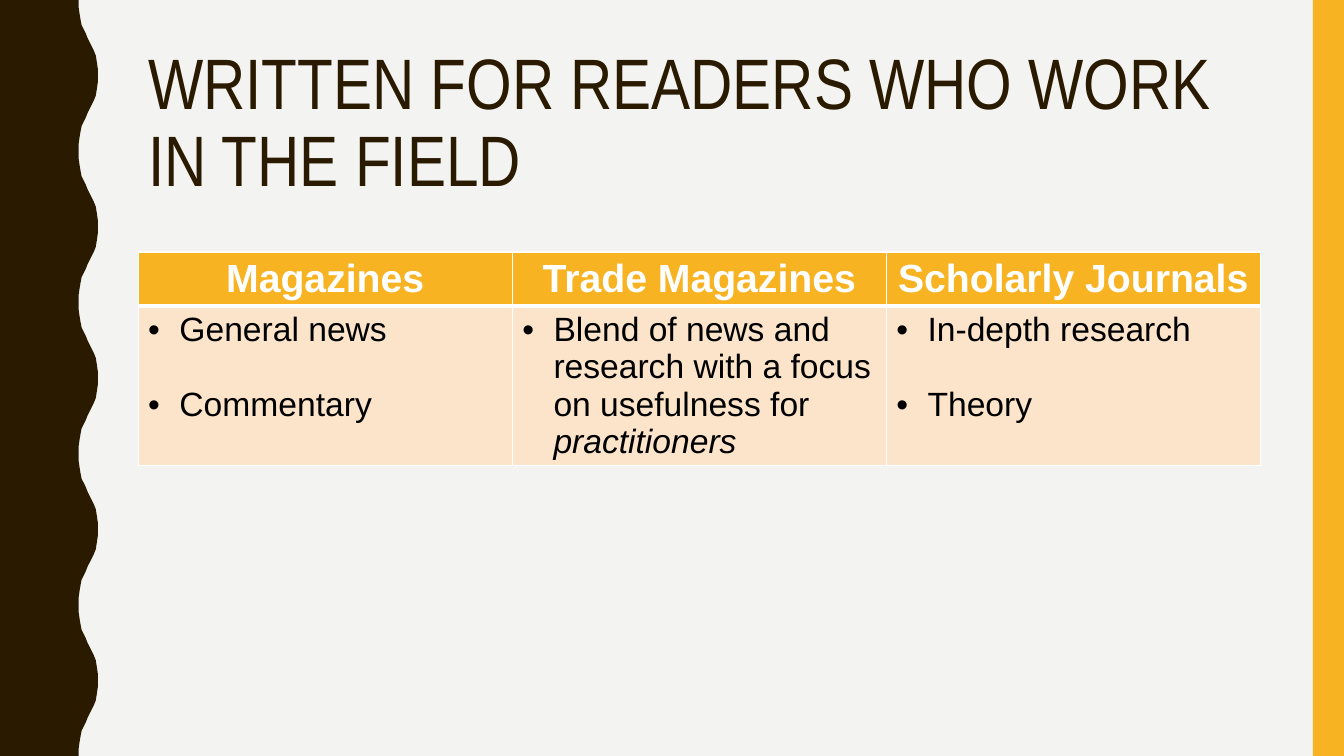
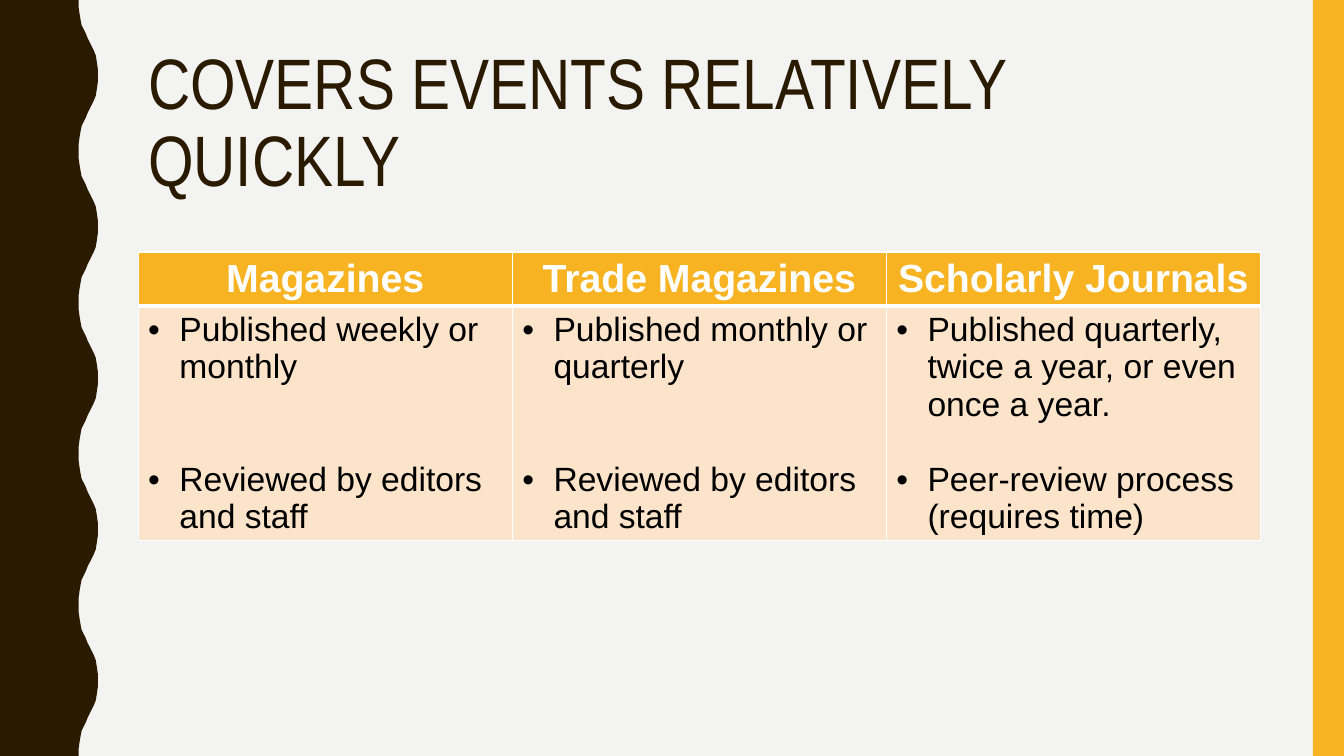
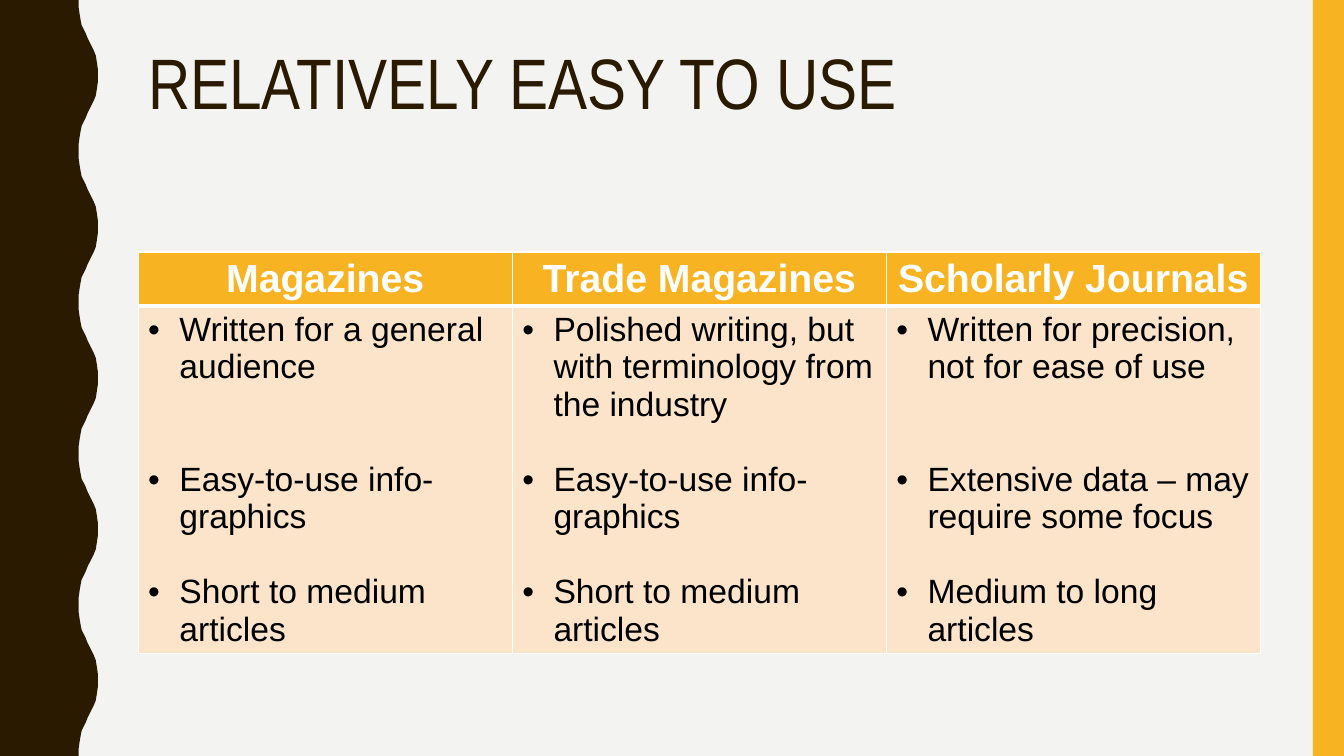
from lxml.etree import SubElement
from pptx import Presentation
from pptx.dml.color import RGBColor
from pptx.enum.shapes import MSO_SHAPE
from pptx.enum.text import MSO_ANCHOR, MSO_AUTO_SIZE, PP_ALIGN
from pptx.oxml.ns import qn
from pptx.util import Inches, Pt

BROWN = RGBColor(0x2A, 0x1A, 0x00)
AMBER = RGBColor(0xF8, 0xB3, 0x23)
PEACH = RGBColor(0xFC, 0xE4, 0xCB)
PAPER = RGBColor(0xF3, 0xF3, 0xF2)
WHITE = RGBColor(0xFF, 0xFF, 0xFF)
BLACK = RGBColor(0x00, 0x00, 0x00)

SLIDE_W, SLIDE_H = 13.33, 7.5
WAVE_COUNT = 5
WAVE_H = SLIDE_H / WAVE_COUNT
WAVE_RISE = [
    (0.78, 0), (0.78, 0.07), (0.79, 0.14), (0.8, 0.2), (0.81, 0.25),
    (0.83, 0.29), (0.85, 0.33), (0.87, 0.38), (0.89, 0.42), (0.91, 0.46),
    (0.93, 0.5), (0.95, 0.55), (0.96, 0.61), (0.97, 0.68),
]
AMBER_BAND = (13.02, 0, 0.31, SLIDE_H)
TITLE_BOX = (1.37, 0.42, 11.13, 1.63)
TABLE_BOX = (1.37, 2.5, 11.13, 0.82)

TITLE_FONT = {"name": "Arial Narrow", "size": Pt(51)}
HEADING_FONT = {"name": "Arial", "size": Pt(28), "bold": True}
BODY_FONT = {"name": "Arial", "size": Pt(24), "bold": False}
BODY_LINE = 26.8
BULLET_INDENT = Inches(0.31)
THIN, THICK = Pt(1), Pt(3)

HEADINGS = ["Magazines", "Trade Magazines", "Scholarly Journals"]
COMPARISONS = [
    ("WRITTEN FOR READERS WHO WORK IN THE FIELD", [
        [(0, "General news"), (1, "Commentary")],
        [(0, "Blend of news and research with a focus on usefulness for ",
          "practitioners")],
        [(0, "In-depth research"), (1, "Theory")],
    ]),
    ("COVERS EVENTS RELATIVELY QUICKLY", [
        [(0, "Published weekly or monthly"),
         (2, "Reviewed by editors and staff")],
        [(0, "Published monthly or quarterly"),
         (2, "Reviewed by editors and staff")],
        [(0, "Published quarterly, twice a year, or even once a year."),
         (1, "Peer-review process (requires time)")],
    ]),
    ("RELATIVELY EASY TO USE", [
        [(0, "Written for a general audience"),
         (2, "Easy-to-use info-graphics"),
         (1, "Short to medium articles")],
        [(0, "Polished writing, but with terminology from the industry"),
         (1, "Easy-to-use info-graphics"),
         (1, "Short to medium articles")],
        [(0, "Written for precision, not for ease of use"),
         (2, "Extensive data – may require some focus"),
         (1, "Medium to long articles")],
    ]),
]


def format_font(font, values, color):
    """Apply a dict of font values and a colour."""
    for attribute, value in values.items():
        setattr(font, attribute, value)
    font.color.rgb = color


def paint(shape, color):
    """Give a shape a flat fill without line or shadow."""
    shape.fill.solid()
    shape.fill.fore_color.rgb = color
    shape.line.fill.background()
    shape.shadow.inherit = False


def add_bands(slide):
    """Draw the wavy left band and the straight right band."""
    wave = WAVE_RISE + [(0.97, WAVE_H / 2)]
    wave += [(x, WAVE_H - y) for x, y in reversed(WAVE_RISE[1:])]
    edge = [(x, y + i * WAVE_H) for i in range(WAVE_COUNT) for x, y in wave]
    corners = [(0.78, SLIDE_H), (0, SLIDE_H)]
    outline = slide.shapes.build_freeform(0, 0)
    outline.add_line_segments(
        [(Inches(x), Inches(y)) for x, y in edge + corners], close=True)
    paint(outline.convert_to_shape(), BROWN)
    paint(slide.shapes.add_shape(
        MSO_SHAPE.RECTANGLE, *map(Inches, AMBER_BAND)), AMBER)


def set_title(slide, text, box):
    """Place and format the title placeholder."""
    title = slide.shapes.title
    title.left, title.top, title.width, title.height = map(Inches, box)
    frame = title.text_frame
    frame.text = text
    frame.word_wrap = True
    frame.auto_size = MSO_AUTO_SIZE.NONE
    frame.vertical_anchor = MSO_ANCHOR.TOP
    heading = frame.paragraphs[0]
    heading.alignment = PP_ALIGN.LEFT
    heading.line_spacing = 0.9
    format_font(heading.runs[0].font, TITLE_FONT, BROWN)


def style_cell(cell, color, top, bottom):
    """Set the white borders and the fill of a cell."""
    properties = cell._tc.get_or_add_tcPr()
    for side, width in (("L", THIN), ("R", THIN), ("T", top), ("B", bottom)):
        border = SubElement(properties, qn(f"a:ln{side}"), w=str(width))
        fill = SubElement(border, qn("a:solidFill"))
        SubElement(fill, qn("a:srgbClr"), val=str(WHITE))
    cell.fill.solid()
    cell.fill.fore_color.rgb = color


def add_bullet(paragraph):
    """Give a paragraph a black bullet with a hanging indent."""
    properties = paragraph._p.get_or_add_pPr()
    properties.set("marL", str(BULLET_INDENT))
    properties.set("indent", str(-BULLET_INDENT))
    color = SubElement(properties, qn("a:buClr"))
    SubElement(color, qn("a:srgbClr"), val=str(BLACK))
    SubElement(properties, qn("a:buFont"), typeface="Arial")
    SubElement(properties, qn("a:buChar"), char="•")


def fill_heading(cell, text):
    """Write a column heading."""
    style_cell(cell, AMBER, THIN, THICK)
    heading = cell.text_frame.paragraphs[0]
    heading.alignment = PP_ALIGN.CENTER
    run = heading.add_run()
    run.text = text
    format_font(run.font, HEADING_FONT, WHITE)


def fill_points(cell, points):
    """Write bullet points, each after its gap in lines."""
    style_cell(cell, PEACH, THICK, THIN)
    frame = cell.text_frame
    for i, (gap, *parts) in enumerate(points):
        point = frame.add_paragraph() if i else frame.paragraphs[0]
        add_bullet(point)
        point.space_before = Pt(gap * BODY_LINE)
        for j, text in enumerate(parts):
            run = point.add_run()
            run.text = text
            format_font(run.font, {**BODY_FONT, "italic": j > 0}, BLACK)


def add_comparison(slide, columns, box):
    """Add the table that compares the kinds of publication."""
    table = slide.shapes.add_table(
        2, len(HEADINGS), *map(Inches, box)).table
    table.horz_banding = False
    for i, (heading, points) in enumerate(zip(HEADINGS, columns)):
        table.columns[i].width = Inches(box[2] / len(HEADINGS))
        fill_heading(table.cell(0, i), heading)
        fill_points(table.cell(1, i), points)


def main():
    """Build and save the presentation."""
    deck = Presentation()
    deck.slide_width, deck.slide_height = Inches(SLIDE_W), Inches(SLIDE_H)
    backdrop = deck.slide_master.background.fill
    backdrop.solid()
    backdrop.fore_color.rgb = PAPER
    for title, columns in COMPARISONS:
        slide = deck.slides.add_slide(deck.slide_layouts[5])
        add_bands(slide)
        set_title(slide, title, TITLE_BOX)
        add_comparison(slide, columns, TABLE_BOX)
    deck.save("out.pptx")


if __name__ == "__main__":
    main()
